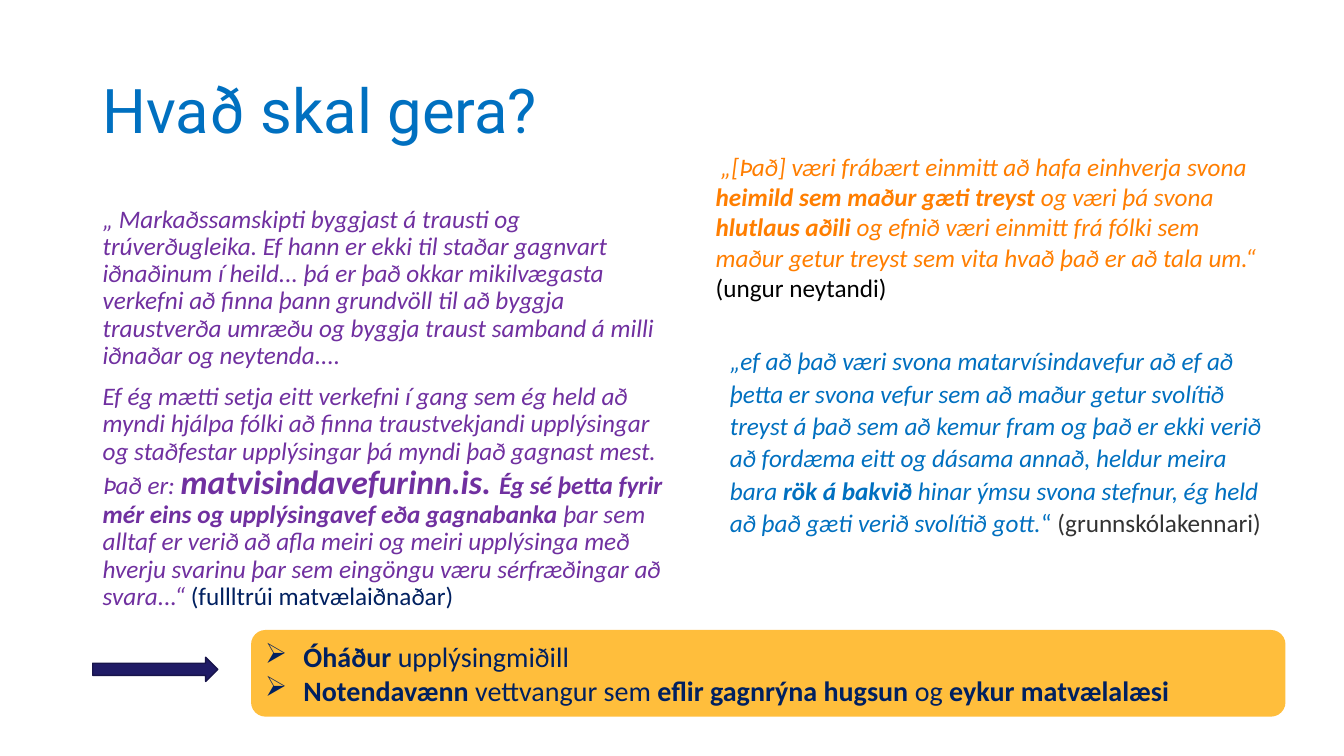
from dataclasses import dataclass

from lxml import etree
from pptx import Presentation
from pptx.dml.color import RGBColor
from pptx.enum.shapes import MSO_SHAPE
from pptx.enum.text import MSO_ANCHOR, PP_ALIGN
from pptx.oxml.ns import qn
from pptx.util import Emu, Pt

PX = 9144  # EMU, 100 px to the inch
ROUNDED = MSO_SHAPE.FLOWCHART_ALTERNATE_PROCESS
ARROW = MSO_SHAPE.RIGHT_ARROW
TOP, MIDDLE = MSO_ANCHOR.TOP, MSO_ANCHOR.MIDDLE
LEFT = PP_ALIGN.LEFT


@dataclass(frozen=True)
class Theme:
    heading_font: str = "Roboto"
    body_font: str = "Calibri"
    blue: str = "0070C0"
    purple: str = "7030A0"
    orange: str = "FF7E00"
    navy: str = "002060"
    grey: str = "333333"
    black: str = "000000"
    amber: str = "FFBE3C"
    arrow_fill: str = "201B66"
    arrow_line: str = "18144B"
    title_size: int = 44
    quote_size: int = 18
    site_size: int = 24
    point_size: int = 20


THEME = Theme()

INDUSTRY_QUOTE = [
    [("„ Markaðssamskipti byggjast á trausti og trúverðugleika. Ef hann er ekki til "
      "staðar gagnvart iðnaðinum í heild... þá er það okkar mikilvægasta verkefni að "
      "finna þann grundvöll til að byggja traustverða umræðu og byggja traust samband "
      "á milli iðnaðar og neytenda....", {})],
    [("Ef ég mætti setja eitt verkefni í gang sem ég held að myndi hjálpa fólki að "
      "finna traustvekjandi upplýsingar og staðfestar upplýsingar þá myndi það gagnast "
      "mest. Það er: ", {}),
     ("matvisindavefurinn.is. ", {"bold": True, "size": THEME.site_size}),
     ("Ég sé þetta fyrir mér eins og upplýsingavef eða gagnabanka ", {"bold": True}),
     ("þar sem alltaf er verið að afla meiri og meiri upplýsinga með hverju svarinu "
      "þar sem eingöngu væru sérfræðingar að svara...“ ", {}),
     ("(fullltrúi matvælaiðnaðar)", {"color": THEME.navy, "italic": False})],
]
CONSUMER_QUOTE = [
    [("„[Það] væri frábært einmitt að hafa einhverja svona ", {}),
     ("heimild sem maður gæti treyst ", {"bold": True}),
     ("og væri þá svona ", {}),
     ("hlutlaus aðili ", {"bold": True}),
     ("og efnið væri einmitt frá fólki sem maður getur treyst sem vita hvað það er "
      "að tala um.“ ", {}),
     ("(ungur neytandi)", {"color": THEME.black, "italic": False})],
]
TEACHER_QUOTE = [
    [("„ef að það væri svona matarvísindavefur að ef að þetta er svona vefur sem að "
      "maður getur svolítið treyst á það sem að kemur fram og það er ekki verið að "
      "fordæma eitt og dásama annað, heldur meira bara ", {}),
     ("rök á bakvið ", {"bold": True}),
     ("hinar ýmsu svona stefnur, ég held að það gæti verið svolítið gott.", {}),
     ("“ ", {"italic": False}),
     ("(grunnskólakennari)", {"color": THEME.grey, "italic": False})],
]
POINTS = [
    [("Óháður ", {"bold": True}), ("upplýsingmiðill", {})],
    [("Notendavænn ", {"bold": True}), ("vettvangur sem ", {}),
     ("eflir gagnrýna hugsun ", {"bold": True}), ("og ", {}),
     ("eykur matvælalæsi", {"bold": True})],
]


def px(*lengths):
    return [Emu(length * PX) for length in lengths]


def add_span(para, text, size, color, font=THEME.body_font, bold=False, italic=False):
    span = para.add_run()
    span.text = text
    span.font.name = font
    span.font.size = Pt(size)
    span.font.bold = bold
    span.font.italic = italic
    span.font.color.rgb = RGBColor.from_string(color)


def set_indent(para, margin, first_line):
    properties = para._p.get_or_add_pPr()
    properties.set("marL", str(margin * PX))
    properties.set("indent", str(first_line * PX))


def add_bullet(para, mark):
    set_indent(para, 38, -38)
    bullet = etree.SubElement(para._p.get_or_add_pPr(), qn("a:buChar"))
    bullet.set("char", mark)


def write(box, paragraphs, style, anchor=TOP, spacing=1.0, gap=0, bullet=None):
    """Fill a box; each span may override the shared style, gap parts paragraphs."""
    frame = box.text_frame
    frame.word_wrap = True
    frame.vertical_anchor = anchor
    for number, spans in enumerate(paragraphs):
        para = frame.add_paragraph() if number else frame.paragraphs[0]
        para.alignment = LEFT
        para.line_spacing = spacing
        if number and gap:
            para.space_before = Pt(gap)
        if bullet:
            add_bullet(para, bullet)
        for text, changes in spans:
            add_span(para, text, **{**style, **changes})
    return frame


def add_text(page, place, paragraphs, style, **layout):
    box = page.shapes.add_textbox(*px(*place))
    return write(box, paragraphs, style, **layout)


def add_quote(page, place, paragraphs, color, **layout):
    style = {"size": THEME.quote_size, "color": color, "italic": True}
    return add_text(page, place, paragraphs, style, **layout)


def add_block(page, kind, place, fill, line=None):
    block = page.shapes.add_shape(kind, *px(*place))
    block.shadow.inherit = False
    block.fill.solid()
    block.fill.fore_color.rgb = RGBColor.from_string(fill)
    if line:
        block.line.color.rgb = RGBColor.from_string(line)
        block.line.width = Pt(1)
    else:
        block.line.fill.background()
    return block


def main():
    deck = Presentation()
    deck.slide_width, deck.slide_height = px(1333, 750)
    page = deck.slides.add_slide(deck.slide_layouts[6])

    title_style = {"size": THEME.title_size, "color": THEME.blue,
                   "font": THEME.heading_font}
    add_text(page, (92, 40, 1134, 145), [[("Hvað skal gera?", {})]], title_style,
             anchor=MIDDLE, spacing=0.9)

    add_quote(page, (92, 200, 592, 520), INDUSTRY_QUOTE, THEME.purple,
              spacing=0.9, gap=10)
    add_quote(page, (714, 336, 562, 203), TEACHER_QUOTE, THEME.blue, spacing=1.07)
    consumer = add_quote(page, (700, 145, 562, 162), CONSUMER_QUOTE, THEME.orange)
    set_indent(consumer.paragraphs[0], 0, 5)

    summary = add_block(page, ROUNDED, (249, 625, 1026, 86), THEME.amber)
    write(summary, POINTS, {"size": THEME.point_size, "color": THEME.navy},
          anchor=MIDDLE, bullet="➢")
    add_block(page, ARROW, (92, 652, 124, 24), THEME.arrow_fill, THEME.arrow_line)

    deck.save("out.pptx")


if __name__ == "__main__":
    main()
